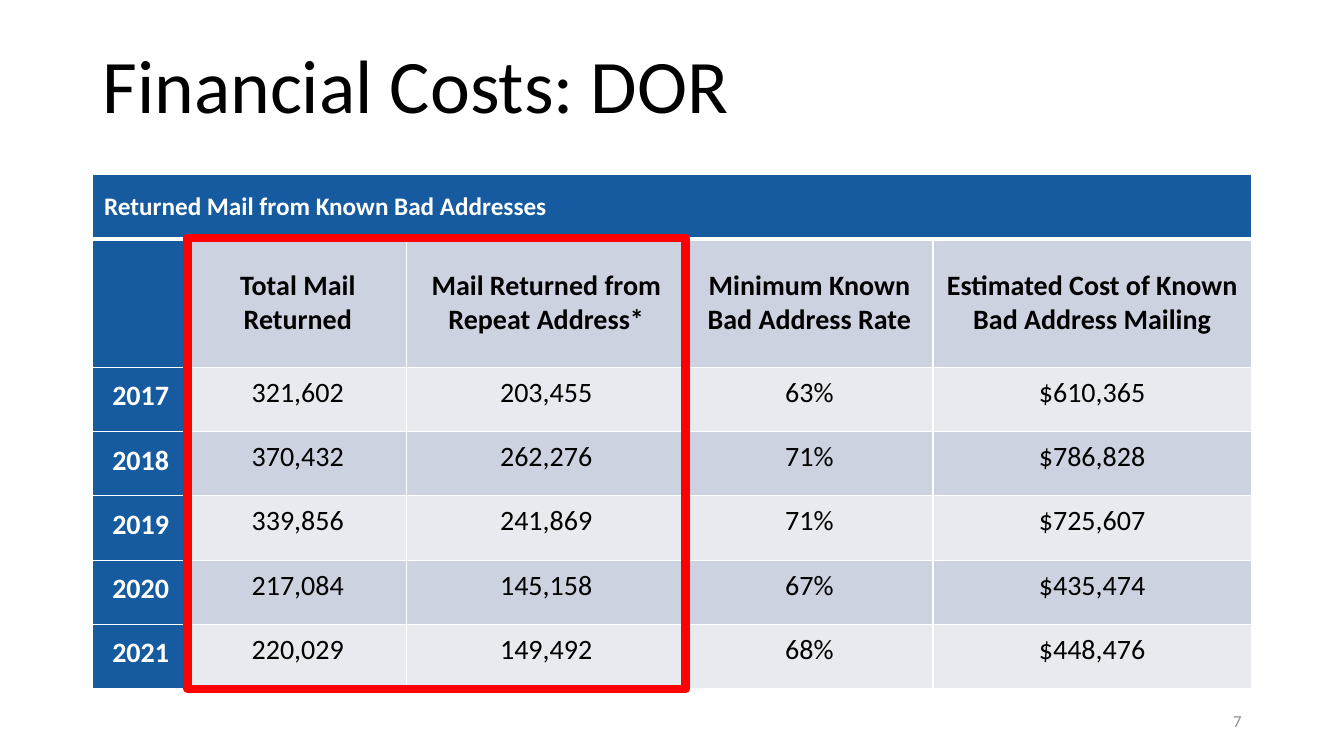
from dataclasses import dataclass

from lxml import etree
from pptx import Presentation
from pptx.dml.color import RGBColor
from pptx.enum import shapes, text
from pptx.oxml import ns
from pptx.util import Pt


@dataclass(frozen=True)
class Theme:
    font: str = "Calibri"
    blue: str = "165B9F"
    dark_band: str = "CCD2DF"
    light_band: str = "E8EAF0"
    white: str = "FFFFFF"
    black: str = "000000"
    gray: str = "8C8C8C"
    red: str = "FF0000"
    title_size: int = 54
    table_size: int = 20
    banner_size: int = 18
    number_size: int = 12


theme = Theme()


def format_text(text_frame, size, color, align, bold=False):
    for paragraph in text_frame.paragraphs:
        paragraph.alignment = align
        for run in paragraph.runs:
            run.font.name = theme.font
            run.font.size = Pt(size)
            run.font.bold = bold
            run.font.color.rgb = RGBColor.from_string(color)


def add_border(cell, side, width):
    """Draw a white line on one side of a cell; call before filling the cell."""
    line = etree.SubElement(cell._tc.get_or_add_tcPr(), ns.qn(f"a:ln{side}"), w=str(Pt(width)))
    fill = etree.SubElement(line, ns.qn("a:solidFill"))
    etree.SubElement(fill, ns.qn("a:srgbClr"), val=theme.white)


presentation = Presentation()
presentation.slide_width, presentation.slide_height = Pt(960), Pt(540)
slide = presentation.slides.add_slide(presentation.slide_layouts[5])

# Title
title = slide.shapes.title
title.left, title.top, title.width, title.height = Pt(66), Pt(23), Pt(828), Pt(73.5)
title.text_frame.text = "Financial Costs: DOR"
title.text_frame.auto_size = text.MSO_AUTO_SIZE.NONE
title.text_frame.vertical_anchor = text.MSO_ANCHOR.BOTTOM
title.text_frame.paragraphs[0].line_spacing = 0.9
format_text(title.text_frame, theme.title_size, theme.black, text.PP_ALIGN.LEFT)

# Slide number
number = slide.shapes.add_textbox(Pt(678), Pt(500.5), Pt(216), Pt(28.75))
number.text_frame.word_wrap = True
number.text_frame.text = "7"
number.text_frame.vertical_anchor = text.MSO_ANCHOR.MIDDLE
number.text_frame.paragraphs[0].space_after = Pt(6)
format_text(number.text_frame, theme.number_size, theme.gray, text.PP_ALIGN.RIGHT)

# Returned mail table
rows = [
    ["Returned Mail from Known Bad Addresses", "", "", "", ""],
    ["", "Total Mail Returned", "Mail Returned from\nRepeat Address*",
     "Minimum Known Bad Address Rate", "Estimated Cost of Known Bad Address Mailing"],
    ["2017", "321,602", "203,455", "63%", "$610,365"],
    ["2018", "370,432", "262,276", "71%", "$786,828"],
    ["2019", "339,856", "241,869", "71%", "$725,607"],
    ["2020", "217,084", "145,158", "67%", "$435,474"],
    ["2021", "220,029", "149,492", "68%", "$448,476"],
]
column_widths = [69, 155.5, 199.5, 176.5, 227.5]
row_height = 45.9
frame = slide.shapes.add_table(len(rows), len(column_widths), Pt(66), Pt(124.75),
                               Pt(sum(column_widths)), Pt(row_height * 8))
table = frame.table
for column, width in zip(table.columns, column_widths):
    column.width = Pt(width)
for index, row in enumerate(table.rows):
    row.height = Pt(row_height * (2 if index == 1 else 1))
table.cell(0, 0).merge(table.cell(0, 4))

for row_index, values in enumerate(rows):
    for column_index, value in enumerate(values):
        cell = table.cell(row_index, column_index)
        is_banner = row_index == 0
        is_blue = is_banner or column_index == 0
        is_heading = is_blue or row_index == 1
        for side in "LRTB":
            under_banner = (row_index, side) in [(0, "B"), (1, "T")]
            add_border(cell, side, 3 if under_banner else 1)
        band = theme.light_band if row_index % 2 == 0 else theme.dark_band
        cell.fill.solid()
        cell.fill.fore_color.rgb = RGBColor.from_string(theme.blue if is_blue else band)
        margin = Pt(8.4 if is_heading else 6)
        cell.margin_left = cell.margin_right = cell.margin_top = cell.margin_bottom = margin
        cell.vertical_anchor = text.MSO_ANCHOR.MIDDLE if row_index < 2 else text.MSO_ANCHOR.TOP
        if value:
            cell.text_frame.text = value
            format_text(cell.text_frame,
                        theme.banner_size if is_banner else theme.table_size,
                        theme.white if is_blue else theme.black,
                        text.PP_ALIGN.LEFT if is_banner else text.PP_ALIGN.CENTER,
                        is_heading)

# Highlight around the two mail count columns
highlight = slide.shapes.add_shape(shapes.MSO_SHAPE.RECTANGLE,
                                   Pt(134), Pt(170), Pt(355.75), Pt(322))
highlight.shadow.inherit = False
highlight.fill.background()
highlight.line.color.rgb = RGBColor.from_string(theme.red)
highlight.line.width = Pt(6)

presentation.save("out.pptx")
